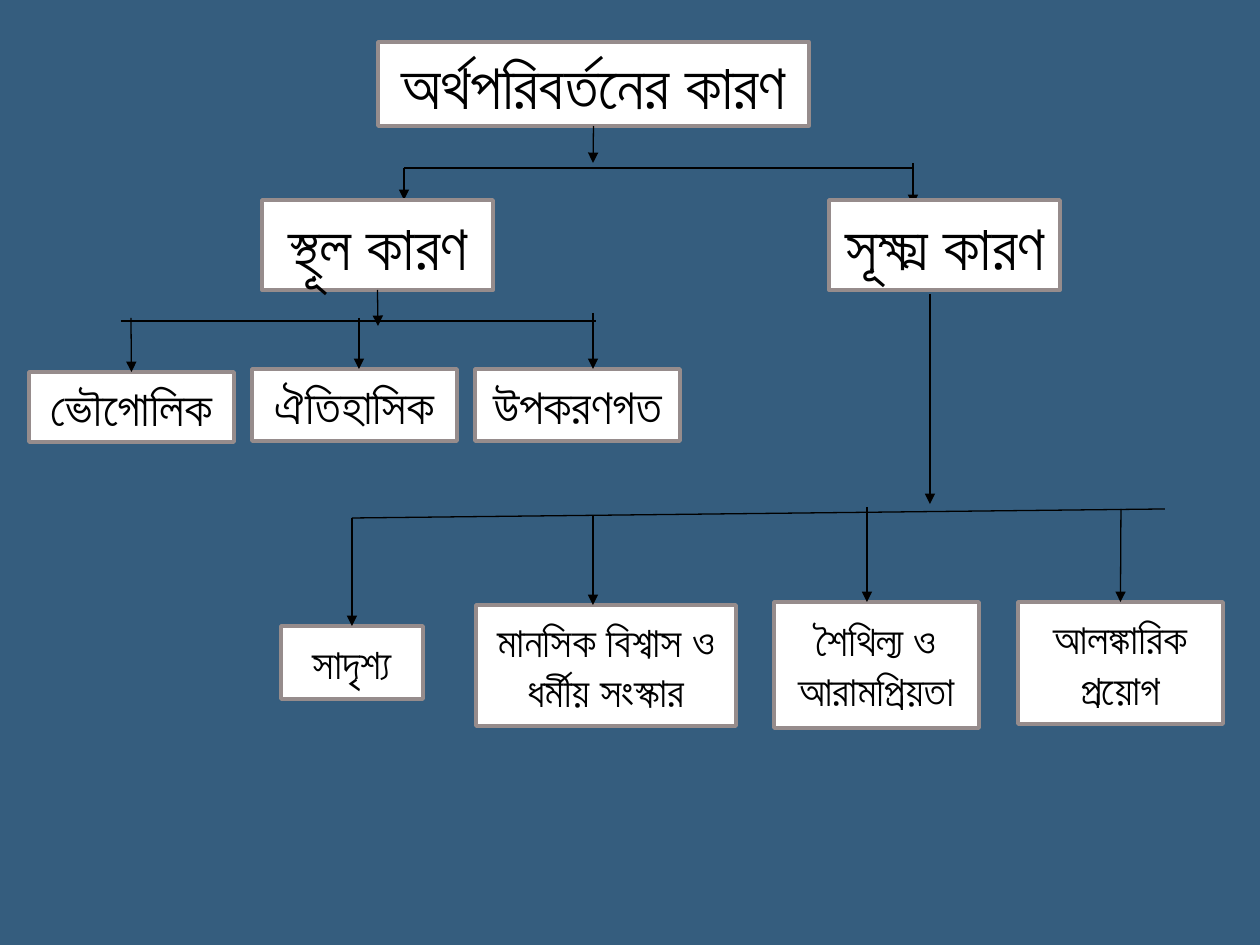
from dataclasses import dataclass

from lxml.etree import SubElement
from pptx import Presentation
from pptx.dml.color import RGBColor
from pptx.enum.shapes import MSO_CONNECTOR, MSO_SHAPE
from pptx.enum.text import MSO_ANCHOR, MSO_AUTO_SIZE, PP_ALIGN
from pptx.oxml.ns import qn
from pptx.util import Emu, Pt


@dataclass(frozen=True)
class Theme:
    back: RGBColor = RGBColor(0x35, 0x5D, 0x7E)
    fill: RGBColor = RGBColor(0xFF, 0xFF, 0xFF)
    edge: RGBColor = RGBColor(0x96, 0x8C, 0x8C)
    ink: RGBColor = RGBColor(0, 0, 0)
    font: str = "Calibri"
    large: int = 36
    mid: int = 28
    small: int = 24
    frame: float = 2
    wire: float = 0.75


THEME = Theme()
TOP, BASE = 0, 2


def px(count):
    return Emu(round(count * 914400 / 126))


def shift(box, x, y):
    return box[0] + x, box[1] + y


def style(shape, text, size):
    shape.shadow.inherit = False
    shape.fill.solid()
    shape.fill.fore_color.rgb = THEME.fill
    shape.line.color.rgb = THEME.edge
    shape.line.width = Pt(THEME.frame)
    frame = shape.text_frame
    frame.word_wrap = True
    frame.auto_size = MSO_AUTO_SIZE.NONE
    frame.vertical_anchor = MSO_ANCHOR.MIDDLE
    for i, words in enumerate(text.split("\n")):
        para = frame.add_paragraph() if i else frame.paragraphs[0]
        para.alignment = PP_ALIGN.CENTER
        run = para.add_run()
        run.text = words
        run.font.name = THEME.font
        run.font.size = Pt(size)
        run.font.color.rgb = THEME.ink


def node(slide, spot, wide, high, text, size):
    shape = slide.shapes.add_shape(
        MSO_SHAPE.FLOWCHART_PROCESS, *map(px, (*spot, wide, high)))
    style(shape, text, size)
    return shape


def link(slide, start, end, arrow=True, source=None, target=None):
    line = slide.shapes.add_connector(
        MSO_CONNECTOR.STRAIGHT, *map(px, (*start, *end)))
    line.line.color.rgb = THEME.ink
    line.line.width = Pt(THEME.wire)
    if arrow:
        SubElement(line.line._get_or_add_ln(), qn("a:tailEnd"), type="triangle")
    SubElement(line._element.spPr, qn("a:effectLst"))
    if source is not None:
        line.begin_connect(source, BASE)
    if target is not None:
        line.end_connect(target, TOP)


def head(slide, box, text):
    wide, high = 431, 84
    title = slide.shapes.title
    title.left, title.top, title.width, title.height = map(
        px, (*box, wide, high))
    style(title, text, THEME.large)
    link(slide, shift(box, 215, high), shift(box, 215, 121), source=title)
    link(slide, shift(box, 26, 126), shift(box, 535, 126), arrow=False)
    for x, top, low in ((26, 126, 158), (535, 121, 163)):
        link(slide, shift(box, x, top), shift(box, x, low))


def branch(slide, box, text, left, stem, bar, leaves, size):
    wide, high = 231, 90
    root = node(slide, shift(box, left, 0), wide, high, text, THEME.large)
    x, top, low = stem
    joined = abs(left + wide / 2 - x) <= 1
    link(slide, shift(box, x, top), shift(box, x, low),
         source=root if joined else None)
    link(slide, shift(box, *bar[:2]), shift(box, *bar[2:]), arrow=False)
    for words, x, y, wide, high, drop, top in leaves:
        leaf = node(slide, shift(box, x, y), wide, high, words, size)
        joined = abs(x + wide / 2 - drop) <= 1
        link(slide, shift(box, drop, top), shift(box, drop, y),
             target=leaf if joined else None)


def main():
    deck = Presentation()
    deck.slide_width, deck.slide_height = px(1260), px(945)
    slide = deck.slides.add_slide(deck.slide_layouts[5])
    slide.background.fill.solid()
    slide.background.fill.fore_color.rgb = THEME.back

    head(slide, (378, 42), "অর্থপরিবর্তনের কারণ")
    branch(
        slide, (29, 200), "স্থূল কারণ", 233,
        (349, 90, 126), (92, 121, 567, 121),
        [("ভৌগোলিক", 0, 172, 205, 70, 102, 118),
         ("ঐতিহাসিক", 223, 169, 205, 72, 330, 118),
         ("উপকরণগত", 446, 169, 205, 72, 564, 113)],
        THEME.mid)
    branch(
        slide, (281, 200), "সূক্ষ্ম কারণ", 548,
        (649, 94, 304), (71, 318, 884, 309),
        [("সাদৃশ্য", 0, 426, 142, 73, 71, 318),
         ("মানসিক বিশ্বাস ও\nধর্মীয় সংস্কার", 195, 405, 260, 121, 312, 316),
         ("শৈথিল্য ও\nআরামপ্রিয়তা", 493, 402, 205, 126, 586, 307),
         ("আলঙ্কারিক প্রয়োগ", 737, 402, 205, 122, 840, 309)],
        THEME.small)
    deck.save("out.pptx")


if __name__ == "__main__":
    main()
